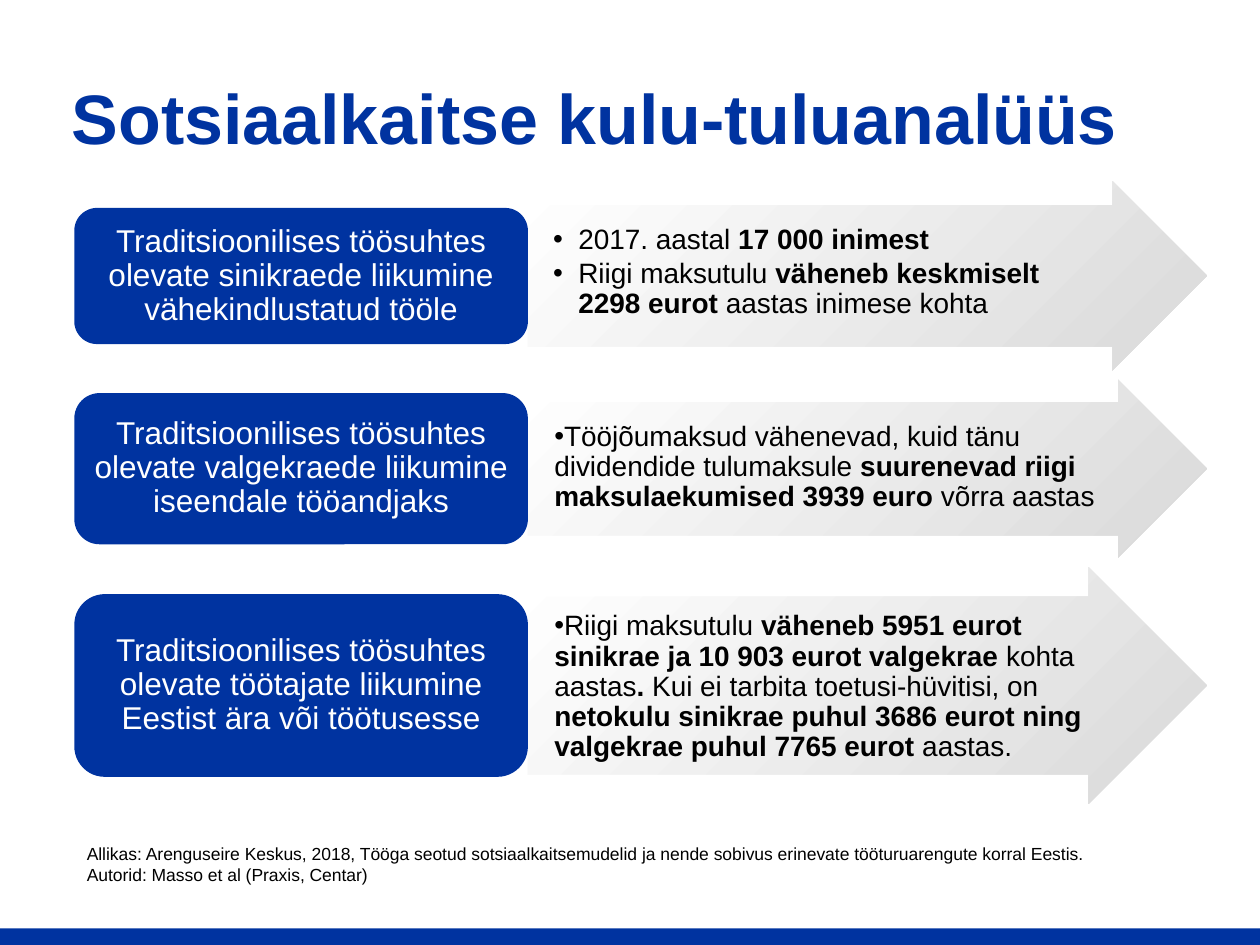
from dataclasses import dataclass

from pptx import Presentation
from pptx.dml.color import RGBColor
from pptx.enum.shapes import MSO_SHAPE
from pptx.enum.text import MSO_ANCHOR, PP_ALIGN
from pptx.oxml import parse_xml
from pptx.oxml.ns import nsdecls, qn
from pptx.util import Pt

RECTANGLE = MSO_SHAPE.RECTANGLE
ROUNDED = MSO_SHAPE.ROUNDED_RECTANGLE
RIGHT_ARROW = MSO_SHAPE.RIGHT_ARROW
TOP, MIDDLE = MSO_ANCHOR.TOP, MSO_ANCHOR.MIDDLE
LEFT, CENTER = PP_ALIGN.LEFT, PP_ALIGN.CENTER


@dataclass(frozen=True)
class Theme:
    font: str = "Arial"
    blue: str = "0033A0"
    white: str = "FFFFFF"
    black: str = "000000"
    gray: str = "D9D9D9"
    title_size: float = 40
    label_size: float = 18
    body_size: float = 16
    source_size: float = 10


class SlideBuilder:
    def __init__(self, slide, theme):
        self.slide = slide
        self.theme = theme

    def style(self, paragraph, size, color):
        for run in paragraph.runs:
            run.font.name = self.theme.font
            run.font.size = Pt(size)
            run.font.color.rgb = RGBColor.from_string(color)

    def frame(self, shape, anchor, insets):
        text_frame = shape.text_frame
        text_frame.word_wrap = True
        text_frame.vertical_anchor = anchor
        (text_frame.margin_left, text_frame.margin_top,
         text_frame.margin_right, text_frame.margin_bottom) = map(Pt, insets)
        return text_frame

    def shape(self, kind, left, top, width, height, fill=None):
        shape = self.slide.shapes.add_shape(
            kind, Pt(left), Pt(top), Pt(width), Pt(height))
        shape.shadow.inherit = False
        shape.line.fill.background()
        if fill:
            shape.fill.solid()
            shape.fill.fore_color.rgb = RGBColor.from_string(fill)
        return shape

    def title(self, text, left, top, width, height):
        title = self.slide.shapes.title
        title.left, title.top, title.width, title.height = map(
            Pt, (left, top, width, height))
        text_frame = self.frame(title, MIDDLE, (7.2, 3.6, 7.2, 3.6))
        text_frame.text = text
        paragraph = text_frame.paragraphs[0]
        paragraph.alignment = LEFT
        self.style(paragraph, self.theme.title_size, self.theme.blue)
        paragraph.runs[0].font.bold = True

    def label(self, text, left, top, width, height):
        shape = self.shape(ROUNDED, left, top, width, height, self.theme.blue)
        text_frame = self.frame(shape, MIDDLE, (5, 2.5, 5, 2.5))
        text_frame.text = text
        paragraph = text_frame.paragraphs[0]
        paragraph.alignment = CENTER
        paragraph.line_spacing = 0.9
        self.style(paragraph, self.theme.label_size, self.theme.white)

    def arrow(self, points, left, top, width, height, inset_top, margin, indent):
        shape = self.shape(RIGHT_ARROW, left, top, width, height)
        shape.adjustments[0], shape.adjustments[1] = 0.75, 0.5
        self.gradient(shape)
        text_frame = self.frame(shape, TOP, (0.7, inset_top, 0.7, 0.7))
        for index, point in enumerate(points):
            paragraph = (text_frame.add_paragraph() if index
                         else text_frame.paragraphs[0])
            self.bullet(paragraph, point, margin, indent)

    def gradient(self, shape):
        gradient = parse_xml(
            f'<a:gradFill {nsdecls("a")} rotWithShape="1"><a:gsLst>'
            f'<a:gs pos="0"><a:srgbClr val="{self.theme.gray}"/></a:gs>'
            f'<a:gs pos="100000"><a:srgbClr val="{self.theme.white}"/></a:gs>'
            '</a:gsLst><a:path path="circle">'
            '<a:fillToRect l="100000" t="100000"/></a:path></a:gradFill>')
        shape._element.spPr.find(qn("a:prstGeom")).addnext(gradient)

    def bullet(self, paragraph, text, margin, indent):
        """Write a bullet; ** switches bold and a newline breaks the line."""
        paragraph.level = 1
        paragraph.alignment = LEFT
        paragraph.line_spacing = 0.9
        paragraph.space_after = Pt(0.15 * self.theme.body_size)
        properties = paragraph._p.get_or_add_pPr()
        properties.set("marL", str(Pt(margin)))
        properties.set("indent", str(Pt(indent)))
        for tag in (f'buFont {nsdecls("a")} typeface="{self.theme.font}"',
                    f'buChar {nsdecls("a")} char="•"'):
            properties.append(parse_xml(f"<a:{tag}/>"))
        for part_index, part in enumerate(text.split("**")):
            for line_index, line in enumerate(part.split("\n")):
                if line_index:
                    paragraph.add_line_break()
                if line:
                    run = paragraph.add_run()
                    run.text = line
                    run.font.bold = part_index % 2 == 1
        self.style(paragraph, self.theme.body_size, self.theme.black)

    def source(self, text, left, top, width, height):
        box = self.slide.shapes.add_textbox(
            Pt(left), Pt(top), Pt(width), Pt(height))
        text_frame = self.frame(box, TOP, (7.2, 3.6, 7.2, 3.6))
        text_frame.text = text
        self.style(text_frame.paragraphs[0], self.theme.source_size,
                   self.theme.black)


# Label, label height, arrow height, top inset, bullet margin, indent, points
ROWS = [
    ("Traditsioonilises töösuhtes olevate sinikraede liikumine "
     "vähekindlustatud tööle", 77.8, 108, 11.5, 28.1, -14.4,
     ["2017. aastal **17 000 inimest**",
      "Riigi maksutulu **väheneb keskmiselt \n2298 eurot **"
      "aastas inimese kohta"]),
    ("Traditsioonilises töösuhtes olevate valgekraede liikumine "
     "iseendale tööandjaks", 86.4, 101.5, 11.5, 14.4, 0,
     ["Tööjõumaksud vähenevad, kuid tänu dividendide tulumaksule "
      "**suurenevad riigi maksulaekumised 3939 euro **võrra aastas"]),
    ("Traditsioonilises töösuhtes olevate töötajate liikumine "
     "Eestist ära või töötusesse", 104.4, 135.4, 8.6, 14.4, 0,
     ["Riigi maksutulu **väheneb 5951 eurot sinikrae ja 10 903 eurot "
      "valgekrae **kohta aastas**. **Kui ei tarbita toetusi-hüvitisi, on "
      "**netokulu sinikrae puhul 3686 eurot ning valgekrae puhul "
      "7765 eurot **aastas."]),
]
LABEL_LEFT, LABEL_WIDTH = 42.5, 259.2
ARROW_WIDTH = 388
ROWS_TOP, ROW_GAP = 103.7, 5.4


def main():
    presentation = Presentation()
    presentation.slide_width, presentation.slide_height = Pt(720), Pt(540)
    theme = Theme()
    slide = presentation.slides.add_slide(presentation.slide_layouts[5])
    builder = SlideBuilder(slide, theme)

    # Footer band and title
    builder.shape(RECTANGLE, 0, 530.6, 720, 9.4, theme.blue)
    builder.title("Sotsiaalkaitse kulu-tuluanalüüs", 33.8, 21.6, 648, 90)

    # Each label is centred on the arrow beside it
    top = ROWS_TOP
    for label, label_height, height, inset_top, margin, indent, points in ROWS:
        builder.arrow(points, LABEL_LEFT + LABEL_WIDTH, top, ARROW_WIDTH,
                      height, inset_top, margin, indent)
        builder.label(label, LABEL_LEFT, top + (height - label_height) / 2,
                      LABEL_WIDTH, label_height)
        top += height + ROW_GAP

    # Source
    builder.source(
        "Allikas: Arenguseire Keskus, 2018, Tööga seotud sotsiaalkaitsemudelid "
        "ja nende sobivus erinevate tööturuarengute korral Eestis. "
        "Autorid: Masso et al (Praxis, Centar)", 42.5, 478, 610, 31.7)

    presentation.save("out.pptx")


if __name__ == "__main__":
    main()
